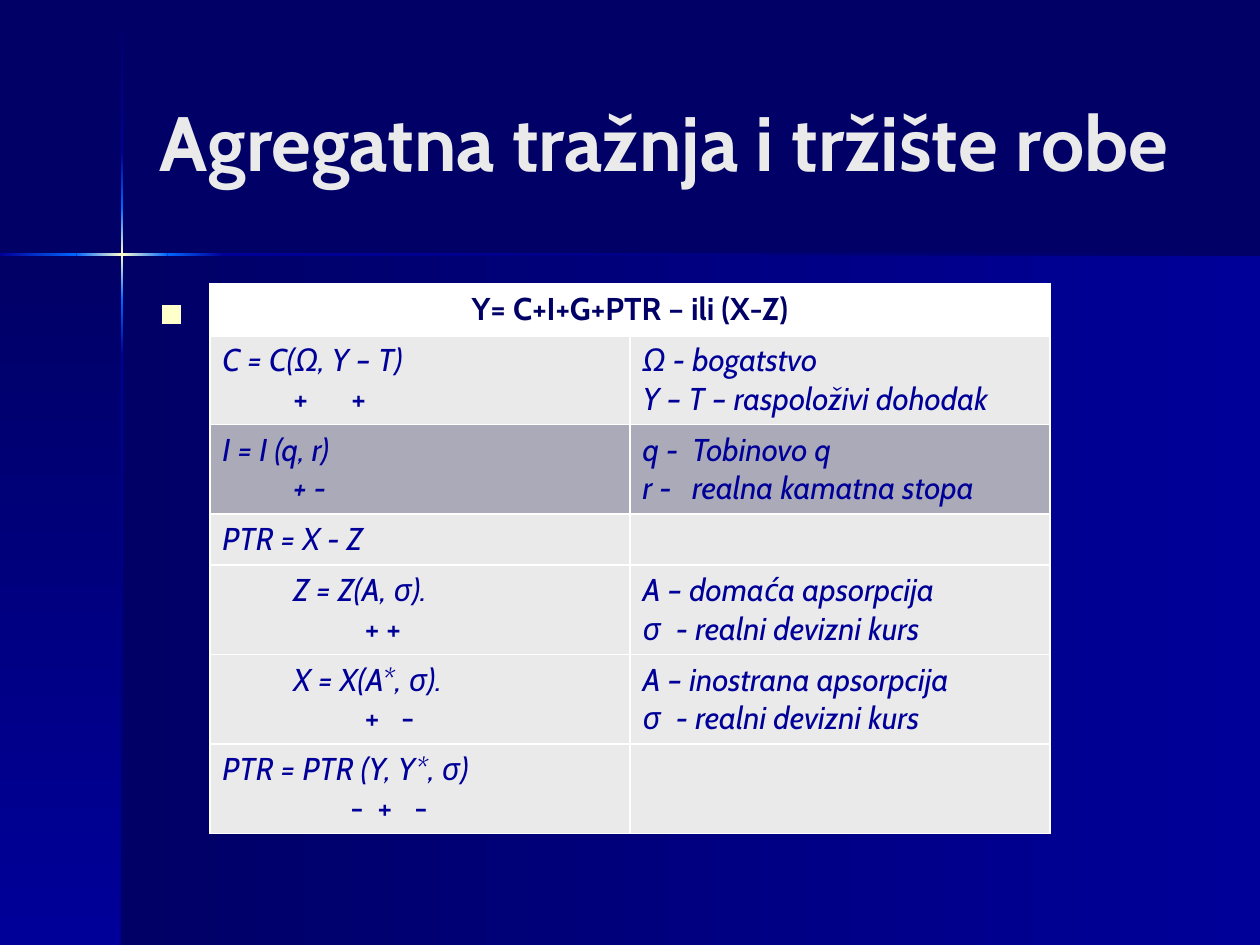
from copy import deepcopy
from itertools import pairwise

from lxml.etree import SubElement
from pptx import Presentation
from pptx.dml.color import RGBColor
from pptx.enum.shapes import MSO_SHAPE as Shape
from pptx.enum.text import MSO_ANCHOR as Anchor, PP_ALIGN as Align
from pptx.oxml.ns import qn
from pptx.util import Cm, Pt

NAVY = RGBColor(0x00, 0x00, 0x66)
BLUE = RGBColor(0x00, 0x00, 0x99)
AZURE = RGBColor(0x00, 0x66, 0xFF)
CREAM = RGBColor(0xFF, 0xFF, 0xCC)
WHITE = RGBColor(0xFF, 0xFF, 0xFF)
LIGHT = RGBColor(0xEA, 0xEA, 0xEA)
GREY = RGBColor(0xAA, 0xAA, 0xB8)
FONT = "Cabin"

WIDTH, HEIGHT = 25.4, 19.05
RAY = 0.05
RAY_COLOURS = [(NAVY, BLUE), (BLUE, AZURE), (AZURE, CREAM, AZURE), (AZURE, BLUE), (BLUE, NAVY)]
COLUMN_STOPS = [0.03, 3.07, 4.19, 6.05, 7.16, HEIGHT]
ROW_STOPS = [0, 1.54, 3.38, 4.5, WIDTH]

HEADING = "Y= C+I+G+PTR – ili (X-Z)"
EQUATIONS = [
    ([("C = C(Ω, Y – T)", True, ()), ("\t+\t+", False, (1.43, 2.6))],
     [("Ω - bogatstvo\vY – T – raspoloživi dohodak", True, ())]),
    ([("I = I (q, r)", True, ()), ("\t+ -", True, (1.43,))],
     [("q -\tTobinovo q", True, (1.0,)), ("r -\trealna kamatna stopa", True, (1.0,))]),
    ([("PTR = X - Z", True, ())], []),
    ([("\tZ = Z(A, σ).", True, (1.43,)), ("\t+ +", False, (2.87,))],
     [("A – domaća apsorpcija\vσ\t- realni devizni kurs", True, (0.67,))]),
    ([("\tX = X(A*, σ).", True, (1.43,)), ("\t+\t-", False, (2.87, 3.6))],
     [("A – inostrana apsorpcija\vσ\t- realni devizni kurs", True, (0.67,))]),
    ([("PTR = PTR (Y, Y*, σ)", True, ()), ("\t-\t+\t-", False, (2.58, 3.13, 3.87))], []),
]


def write(paragraph, text, *, size=18, color=BLUE, bold=False, italic=False,
          align=Align.LEFT, tabs=()):
    """Put formatted text into a paragraph."""
    paragraph.text = text
    paragraph.alignment = align
    for run in paragraph.runs:
        font = run.font
        font.name, font.size, font.bold, font.italic = FONT, Pt(size), bold, italic
        font.color.rgb = color
    if tabs:
        tab_list = SubElement(paragraph._p.get_or_add_pPr(), qn("a:tabLst"))
        for stop in tabs:
            SubElement(tab_list, qn("a:tab"), pos=str(Cm(stop)), algn="l")


def add_rectangle(slide, left, top, width, height):
    """Add a rectangle without line or shadow."""
    shape = slide.shapes.add_shape(Shape.RECTANGLE, Cm(left), Cm(top), Cm(width), Cm(height))
    shape.shadow.inherit = False
    shape.line.fill.background()
    return shape


def add_gradient(slide, left, top, width, height, colors, vertical):
    """Add a rectangle with evenly spaced gradient colours."""
    shape = add_rectangle(slide, left, top, width, height)
    shape.fill.gradient()
    shape.fill.gradient_angle = 270 if vertical else 0
    stop_list = next(shape.element.iter(qn("a:gsLst")))
    for _ in colors[2:]:
        stop_list.insert(1, deepcopy(stop_list[0]))
    for index, (stop, color) in enumerate(zip(shape.fill.gradient_stops, colors)):
        stop.color.rgb = color
        stop.position = index / (len(colors) - 1)


def add_backdrop(slide):
    """Draw the blue panels and the crossing rays of light."""
    slide.background.fill.solid()
    slide.background.fill.fore_color.rgb = NAVY
    add_gradient(slide, 2.46, 5.13, WIDTH - 2.46, HEIGHT - 5.13, (NAVY, BLUE), False)
    add_gradient(slide, 0, 5.13, 2.46, HEIGHT - 5.13, (NAVY, BLUE), True)
    for (start, end), colors in zip(pairwise(COLUMN_STOPS), RAY_COLOURS):
        add_gradient(slide, 2.44, start, RAY, end - start, colors, True)
    for (start, end), colors in zip(pairwise(ROW_STOPS), RAY_COLOURS[1:]):
        add_gradient(slide, start, 5.11, end - start, RAY, colors, False)


def add_title(slide, text):
    """Move the title placeholder to the front and fill it."""
    title = slide.shapes.title
    title.left, title.top, title.width, title.height = Cm(2.97), Cm(0.84), Cm(20.96), Cm(3.99)
    slide.shapes.element.append(title.element)
    title.text_frame.vertical_anchor = Anchor.MIDDLE
    write(title.text_frame.paragraphs[0], text, size=44, color=LIGHT, bold=True)


def add_marker(slide):
    """Add the square marker beside the table."""
    marker = add_rectangle(slide, 3.27, 6.15, 0.38, 0.38)
    marker.fill.solid()
    marker.fill.fore_color.rgb = CREAM


def style_cell(cell, color, bottom=1):
    """Give a cell white borders and a solid fill."""
    properties = cell._tc.get_or_add_tcPr()
    for side, width in {"L": 1, "R": 1, "T": 1, "B": bottom}.items():
        line = SubElement(properties, qn(f"a:ln{side}"), w=str(Pt(width)))
        fill = SubElement(line, qn("a:solidFill"))
        SubElement(fill, qn("a:srgbClr"), val=str(WHITE))
    cell.fill.solid()
    cell.fill.fore_color.rgb = color


def add_equations(slide):
    """Add the table of equations and their explanations."""
    table = slide.shapes.add_table(len(EQUATIONS) + 1, 2, Cm(4.23), Cm(5.72),
                                   Cm(16.94), Cm(10.96)).table
    for column in table.columns:
        column.width = Cm(8.47)
    table.rows[0].height = Cm(1.03)
    table.cell(0, 0).merge(table.cell(0, 1))
    for cell in table.rows[0].cells:
        style_cell(cell, WHITE, bottom=3)
    write(table.cell(0, 0).text_frame.paragraphs[0], HEADING,
          color=NAVY, bold=True, align=Align.CENTER)
    for row, equation in enumerate(EQUATIONS, start=1):
        table.rows[row].height = Cm(1.03 if len(equation[0]) == 1 else 1.78)
        for column, lines in enumerate(equation):
            cell = table.cell(row, column)
            style_cell(cell, GREY if row == 2 else LIGHT)
            frame = cell.text_frame
            for index, (text, italic, tabs) in enumerate(lines):
                paragraph = frame.add_paragraph() if index else frame.paragraphs[0]
                write(paragraph, text, italic=italic, tabs=tabs)


def main():
    """Build and save the slide."""
    presentation = Presentation()
    presentation.slide_width, presentation.slide_height = Cm(WIDTH), Cm(HEIGHT)
    slide = presentation.slides.add_slide(presentation.slide_layouts[5])
    add_backdrop(slide)
    add_title(slide, "Agregatna tražnja i tržište robe")
    add_marker(slide)
    add_equations(slide)
    presentation.save("out.pptx")


if __name__ == "__main__":
    main()
